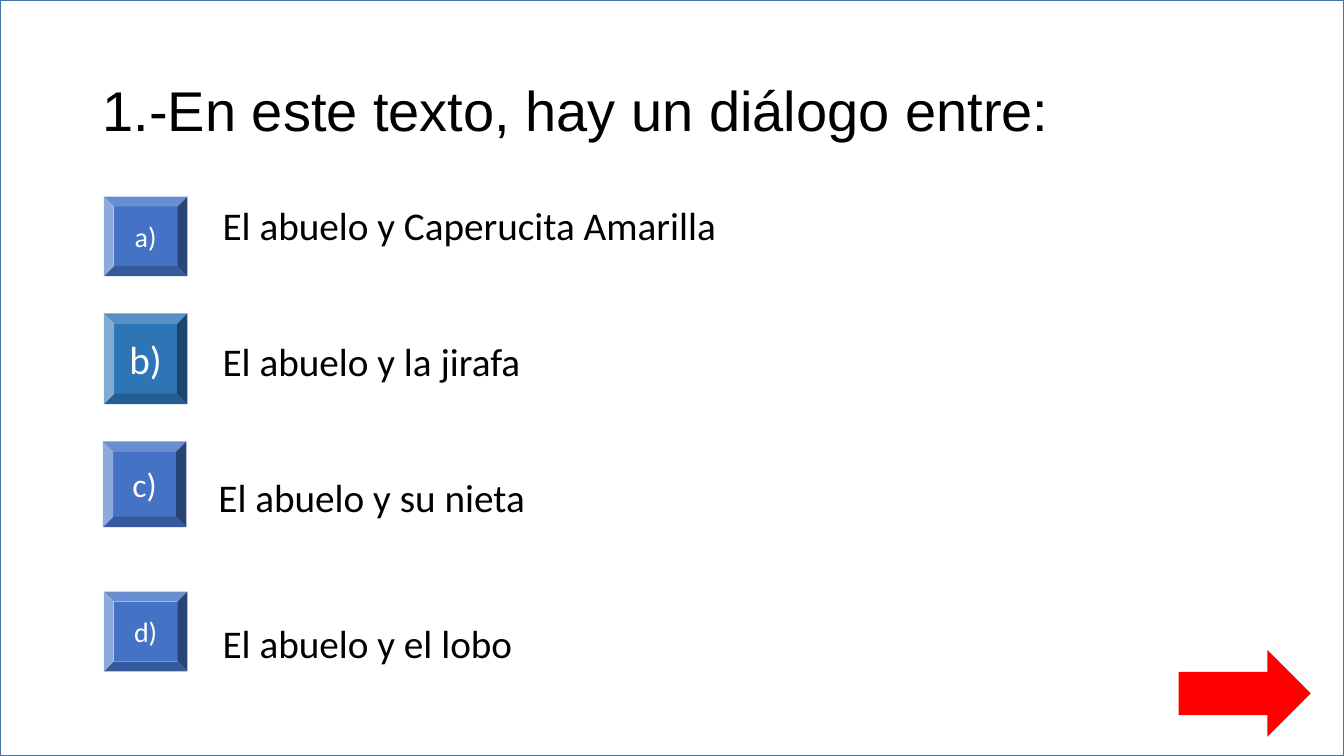
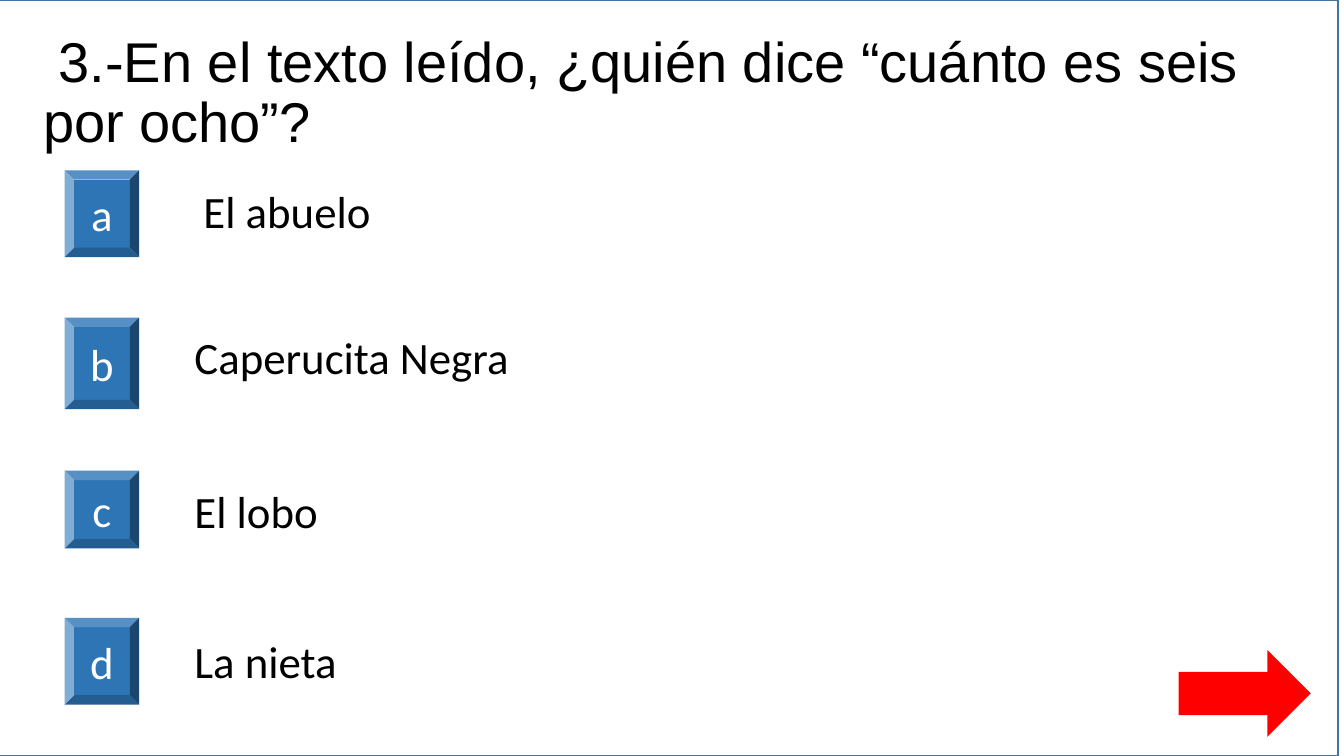
import collections

import pptx
import pptx.dml.color
import pptx.enum.shapes
import pptx.enum.text
import pptx.util

PIXEL = 9144
WIDTH, HEIGHT = 1333, 750
SHAPES = pptx.enum.shapes.MSO_SHAPE
ANCHOR = pptx.enum.text.MSO_ANCHOR
ALIGN = pptx.enum.text.PP_ALIGN

WHITE, BLACK, RED = "FFFFFF", "000000", "FF0000"
FRAME_BLUE, BUTTON_BLUE, ACCENT_BLUE = "43739E", "4472C4", "2E75B6"
TITLE_FONT, BODY_FONT = "Arial", "Calibri"
TITLE_SIZE = 40

Box = collections.namedtuple("Box", "left top width height")
Button = collections.namedtuple("Button", "label box size color")
Answer = collections.namedtuple("Answer", "text box")


def color(hex_string):
    return pptx.dml.color.RGBColor.from_string(hex_string)


def place(box, origin=Box(0, 0, 0, 0)):
    left, top = origin.left + box.left, origin.top + box.top
    return [pptx.util.Emu(value * PIXEL) for value in (left, top, box.width, box.height)]


def write(shape, text, font, size, text_color, align=ALIGN.LEFT, anchor=ANCHOR.TOP):
    frame = shape.text_frame
    frame.word_wrap = True
    frame.vertical_anchor = anchor
    frame.text = text
    paragraph = frame.paragraphs[0]
    paragraph.alignment = align
    for run in paragraph.runs:
        run.font.name = font
        run.font.size = pptx.util.Pt(size)
        run.font.color.rgb = color(text_color)
    return paragraph


def add_shape(slide, kind, position, fill, line=None):
    shape = slide.shapes.add_shape(kind, *position)
    shape.shadow.inherit = False
    shape.fill.solid()
    shape.fill.fore_color.rgb = color(fill)
    if line:
        shape.line.color.rgb = color(line)
        shape.line.width = pptx.util.Pt(1)
    else:
        shape.line.fill.background()
    return shape


def add_title(slide, box, text):
    title = slide.shapes.add_textbox(*place(box))
    paragraph = write(title, text, TITLE_FONT, TITLE_SIZE, BLACK, anchor=ANCHOR.MIDDLE)
    paragraph.line_spacing = 0.9


def add_option(slide, origin, button, answer, answer_size):
    bevel = add_shape(slide, SHAPES.BEVEL, place(button.box, origin), button.color)
    write(bevel, button.label, BODY_FONT, button.size, WHITE, ALIGN.CENTER, ANCHOR.MIDDLE)
    text_box = slide.shapes.add_textbox(*place(answer.box, origin))
    write(text_box, answer.text, BODY_FONT, answer_size, BLACK)


def add_question(presentation, frame_left, title_box, title, options_box, options, answer_size):
    slide = presentation.slides.add_slide(presentation.slide_layouts[6])
    frame = Box(frame_left, 0, WIDTH, HEIGHT)
    add_shape(slide, SHAPES.RECTANGLE, place(frame), WHITE, FRAME_BLUE)
    add_title(slide, title_box, title)
    for button, answer in options:
        add_option(slide, options_box, button, answer, answer_size)
    add_shape(slide, SHAPES.RIGHT_ARROW, place(Box(1169, 645, 131, 86)), RED)


def dialogue_options():
    rows = [
        ("a)", 0, 0, 79, 20, BUTTON_BLUE, "El abuelo y Caperucita Amarilla", 108, 0, 570),
        ("b)", 0, 116, 90, 28, ACCENT_BLUE, "El abuelo y la jirafa", 108, 135, 497),
        ("c)", -1, 243, 85, 24, BUTTON_BLUE, " El abuelo y su nieta", 95, 270, 595),
        ("d)", 0, 392, 79, 20, BUTTON_BLUE, "El abuelo y el lobo", 108, 414, 377),
    ]
    return [
        (Button(label, Box(left, top, 83, height), size, fill),
         Answer(text, Box(text_left, text_top, text_width, 57)))
        for label, left, top, height, size, fill, text, text_left, text_top, text_width in rows
    ]


def speaker_options():
    rows = [
        ("a", 0, 86, "El abuelo", 128, 8, 580),
        ("b", 146, 91, "Caperucita Negra", 119, 153, 448),
        ("c", 298, 77, "El lobo", 119, 306, 844),
        ("d", 444, 86, "La nieta", 119, 455, 741),
    ]
    return [
        (Button(label, Box(0, top, 74, height), 32, ACCENT_BLUE),
         Answer(text, Box(text_left, text_top, text_width, 64)))
        for label, top, height, text, text_left, text_top, text_width in rows
    ]


def main():
    presentation = pptx.Presentation()
    presentation.slide_width = pptx.util.Emu(WIDTH * PIXEL)
    presentation.slide_height = pptx.util.Emu(HEIGHT * PIXEL)
    add_question(
        presentation, 0, Box(92, 77, 1150, 71),
        "1.-En este texto, hay un diálogo entre:",
        Box(103, 195, 678, 471), dialogue_options(), 28,
    )
    add_question(
        presentation, -6, Box(33, 28, 1281, 131),
        " 3.-En el texto leído, ¿quién dice “cuánto es seis por ocho”?",
        Box(64, 169, 963, 530), speaker_options(), 32,
    )
    presentation.save("out.pptx")


if __name__ == "__main__":
    main()
